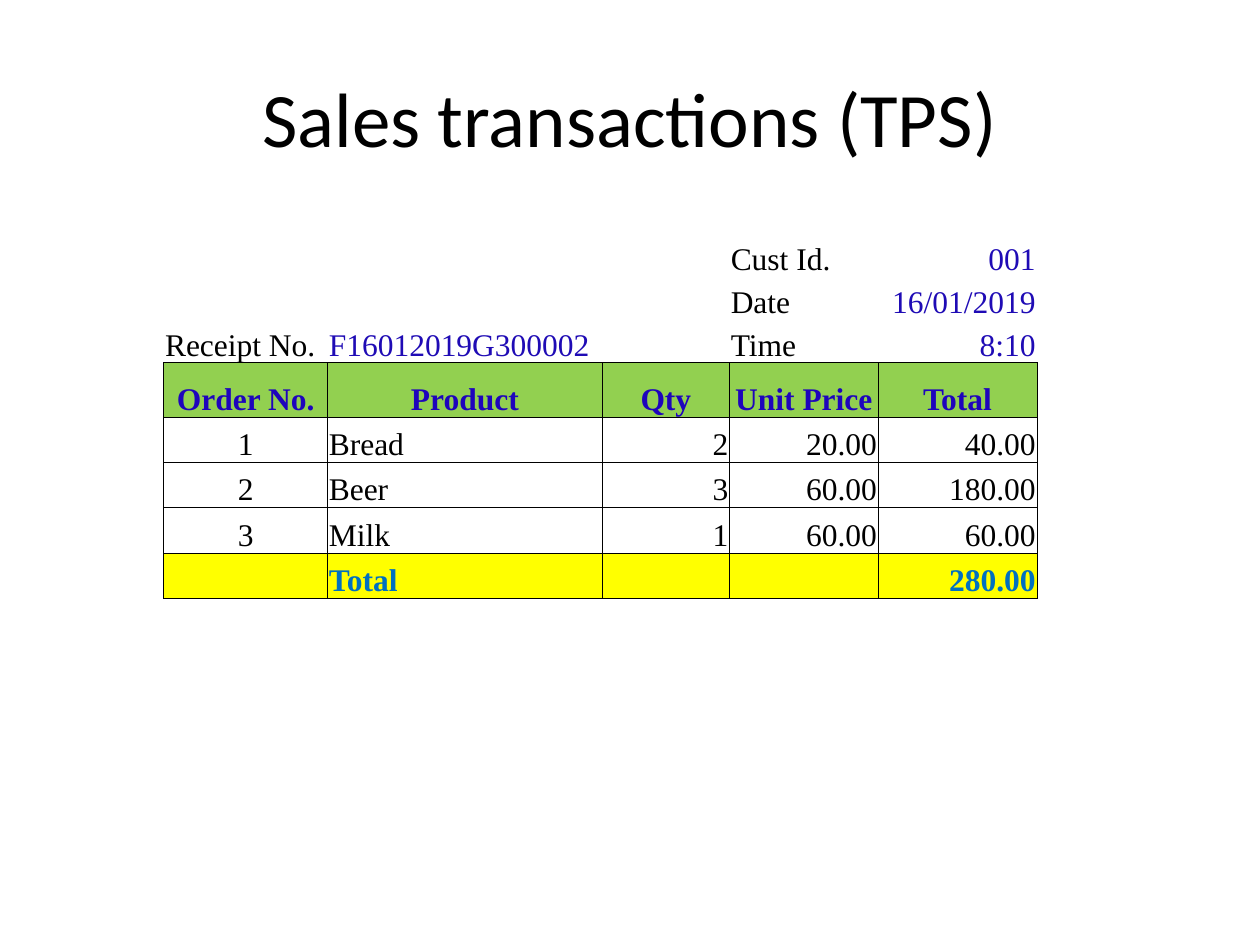
from lxml.etree import SubElement as Sub
from pptx import Presentation
from pptx.dml.color import RGBColor as RGB
from pptx.enum.text import MSO_ANCHOR as Anchor, PP_ALIGN as Align
from pptx.oxml.ns import qn
from pptx.util import Inches, Pt

BLACK = RGB(0x00, 0x00, 0x00)
INK = RGB(0x1F, 0x0B, 0xB5)
HEAD = RGB(0x1E, 0x04, 0xBC)
BLUE = RGB(0x00, 0x70, 0xC0)
GREEN = RGB(0x92, 0xD0, 0x50)
YELLOW = RGB(0xFF, 0xFF, 0x00)

TITLE = "Sales transactions (TPS)"
INFO = [
    ["", "", "", "Cust Id.", "001"],
    ["", "", "", "Date", "16/01/2019"],
    ["Receipt No.", "F16012019G300002", "", "Time", "8:10"],
]
NAMES = ["Order No.", "Product", "Qty", "Unit Price", "Total"]
ITEMS = [
    ["1", "Bread", "2", "20.00", "40.00"],
    ["2", "Beer", "3", "60.00", "180.00"],
    ["3", "Milk", "1", "60.00", "60.00"],
]
SUM = ["", "Total", "", "", "280.00"]
WIDTHS = [1.3, 2.18, 1.01, 1.18, 1.26]
L, C, R = Align.LEFT, Align.CENTER, Align.RIGHT
INFO_ALIGN = [L, L, L, L, R]
ITEM_ALIGN = [C, L, R, R, R]
INFO_INK = [BLACK, INK, BLACK, BLACK, INK]

ROWS = (
    [(row, 0.34, INFO_ALIGN, INFO_INK, False, None) for row in INFO]
    + [(NAMES, 0.43, [C] * 5, [HEAD] * 5, True, GREEN)]
    + [(row, 0.36, ITEM_ALIGN, [BLACK] * 5, False, None) for row in ITEMS]
    + [(SUM, 0.36, ITEM_ALIGN, [BLUE] * 5, True, YELLOW)]
)


def write(para, text, font, size, color, bold=False):
    run = para.add_run()
    run.text = text
    run.font.name = font
    run.font.size = Pt(size)
    run.font.bold = bold
    run.font.color.rgb = color


def border(cell, sides):
    props = cell._tc.get_or_add_tcPr()
    for i, side in enumerate("LRTB"):
        line = Sub(props, qn("a:ln" + side), w=str(Pt(0.5)))
        if side in sides:
            fill = Sub(line, qn("a:solidFill"))
            Sub(fill, qn("a:srgbClr"), val=str(BLACK))
        else:
            Sub(line, qn("a:noFill"))
        props.insert(i, line)


deck = Presentation()
deck.slide_width, deck.slide_height = Inches(10), Inches(7.5)
slide = deck.slides.add_slide(deck.slide_layouts[6])

box = slide.shapes.add_textbox(Inches(0.5), Inches(0.3), Inches(9), Inches(1.25))
frame = box.text_frame
frame.word_wrap = True
frame.vertical_anchor = Anchor.MIDDLE
frame.paragraphs[0].alignment = C
write(frame.paragraphs[0], TITLE, "Calibri", 44, BLACK)

high = sum(row[1] for row in ROWS)
table = slide.shapes.add_table(
    len(ROWS), len(WIDTHS), Inches(1.3), Inches(1.86),
    Inches(sum(WIDTHS)), Inches(high)).table
table.first_row = table.horz_banding = False
for col, width in zip(table.columns, WIDTHS):
    col.width = Inches(width)

for r, (texts, height, aligns, inks, bold, fill) in enumerate(ROWS):
    table.rows[r].height = Inches(height)
    sides = "LRTB" if r >= len(INFO) else "B" if r == len(INFO) - 1 else ""
    for c, text in enumerate(texts):
        cell = table.cell(r, c)
        cell.margin_left = cell.margin_right = cell.margin_top = Inches(0.01)
        cell.margin_bottom = 0
        cell.vertical_anchor = Anchor.BOTTOM
        if fill is None:
            cell.fill.background()
        else:
            cell.fill.solid()
            cell.fill.fore_color.rgb = fill
        border(cell, sides)
        if text:
            para = cell.text_frame.paragraphs[0]
            para.alignment = aligns[c]
            write(para, text, "Times New Roman", 18, inks[c], bold)

deck.save("out.pptx")
